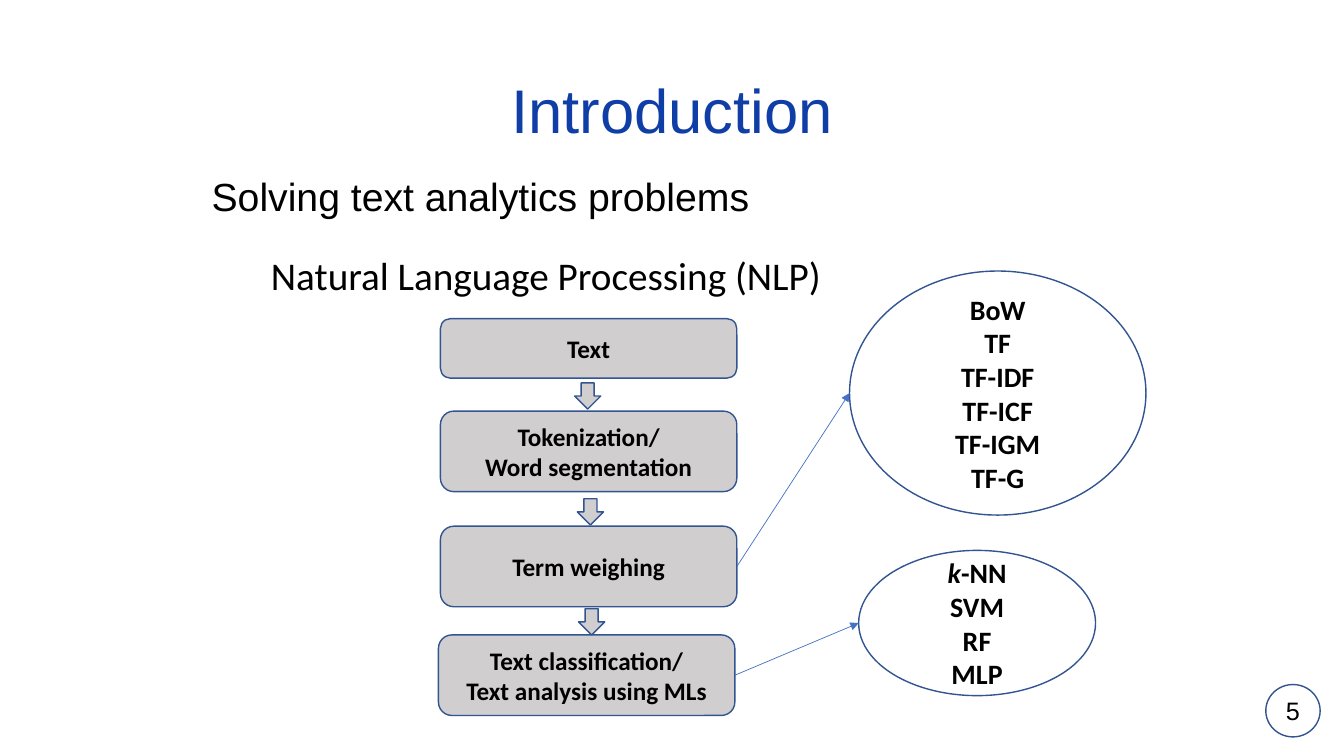
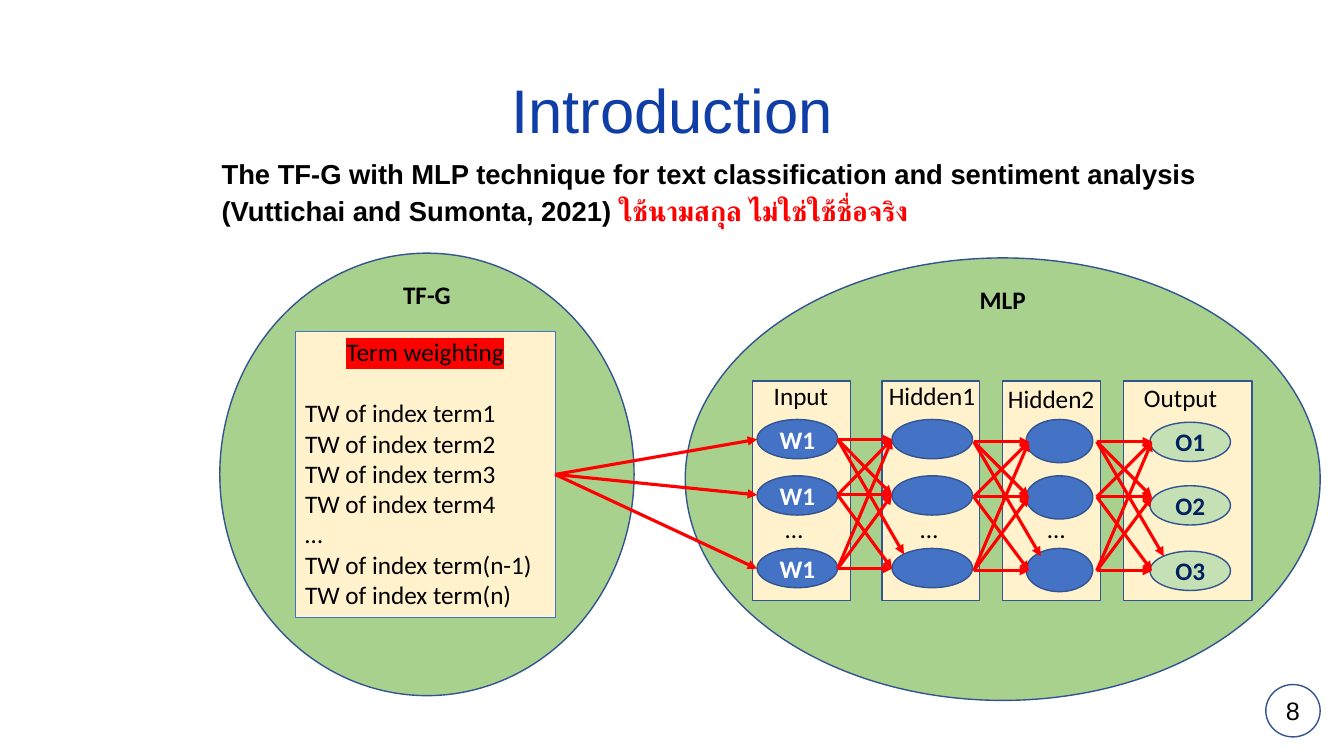
from dataclasses import dataclass
from itertools import product

from lxml import etree
from pptx import Presentation
from pptx.dml.color import RGBColor
from pptx.enum.shapes import MSO_CONNECTOR, MSO_SHAPE
from pptx.enum.text import MSO_ANCHOR, MSO_AUTO_SIZE, PP_ALIGN
from pptx.oxml.ns import qn
from pptx.shapes.autoshape import Shape
from pptx.shapes.connector import Connector
from pptx.slide import Slide
from pptx.text.text import TextFrame
from pptx.util import Cm, Pt

OVAL = MSO_SHAPE.OVAL
RECT = MSO_SHAPE.RECTANGLE
ROUND = MSO_SHAPE.ROUNDED_RECTANGLE
DOWN = MSO_SHAPE.DOWN_ARROW
LINE = MSO_CONNECTOR.STRAIGHT
LEFT, MID = PP_ALIGN.LEFT, PP_ALIGN.CENTER
TOP, CORE = MSO_ANCHOR.TOP, MSO_ANCHOR.MIDDLE
RIGHT_SIDE = 3


@dataclass(frozen=True)
class Theme:
    white: str = "FFFFFF"
    black: str = "000000"
    title: str = "103EA7"
    edge: str = "325491"
    blue: str = "4472C4"
    navy: str = "002060"
    grey: str = "D0CECE"
    green: str = "A9D18E"
    pale: str = "C5E0B4"
    cream: str = "FFF2CC"
    red: str = "FF0000"
    head: str = "Arial"
    text: str = "Calibri"
    huge: float = 44
    large: float = 28
    list: float = 20
    lead: float = 19.6
    base: float = 18


THEME = Theme()


@dataclass(frozen=True)
class Type:
    size: float = THEME.base
    color: str = THEME.black
    bold: bool = False
    face: str = THEME.text


PLAIN = Type()
BOLD = Type(bold=True)
LIST = Type(THEME.list, bold=True)


@dataclass(frozen=True)
class Box:
    x: float
    y: float
    w: float
    h: float


@dataclass(frozen=True)
class Step:
    box: Box
    lines: tuple


@dataclass(frozen=True)
class Layer:
    name: str
    label: Box
    panel: float
    width: float
    node: Box
    tops: tuple
    tags: tuple
    fill: str = THEME.blue
    ink: str = THEME.white
    dots: bool = True


@dataclass(frozen=True)
class Gap:
    start: float
    end: float
    rows: tuple


STEPS = (
    Step(Box(11.1, 8.03, 7.47, 1.5), ("Text",)),
    Step(Box(11.1, 10.36, 7.47, 2.03), ("Tokenization/", "Word segmentation")),
    Step(Box(11.1, 13.26, 7.47, 2.03), ("Term weighing",)),
    Step(Box(11.05, 16, 7.47, 2.03), ("Text classification/", "Text analysis using MLs")),
)
DROPS = ((14.48, 9.65), (14.55, 12.57), (14.58, 15.34))

ROWS = (10.57, 11.99, 13.82)
BLANK = ("", "", "")
LAYERS = (
    Layer("Input", Box(19.25, 9.47, 1.91, 1.02), 18.97, 2.46,
          Box(19.08, 0, 2.03, 0.99), ROWS, ("W1", "W1", "W1")),
    Layer("Hidden1", Box(22.15, 9.45, 2.72, 1.02), 22.23, 2.46,
          Box(22.48, 0, 2.03, 0.99), ROWS, BLANK),
    Layer("Hidden2", Box(25.15, 9.53, 2.72, 1.02), 25.27, 2.46,
          Box(25.86, 0, 1.68, 1.09), ROWS, BLANK),
    Layer("Output", Box(28.58, 9.5, 2.39, 1.02), 28.32, 3.23,
          Box(28.98, 0, 2.03, 0.99), (10.64, 12.24, 13.89),
          ("O1", "O2", "O3"), THEME.pale, THEME.navy, False),
)
NEAR = (11.07, 12.47, 14.33)
FAR = (11.13, 12.52, 14.38)
GAPS = (Gap(21.11, 22.48, NEAR), Gap(24.54, 25.93, FAR), Gap(27.64, 29.03, FAR))


def tint(code: str) -> RGBColor:
    return RGBColor.from_string(code)


def write(frame: TextFrame, lines: tuple, style: Type,
          align: PP_ALIGN = MID, anchor: MSO_ANCHOR = CORE, wrap: bool = True) -> None:
    frame.word_wrap = wrap
    frame.auto_size = MSO_AUTO_SIZE.NONE
    frame.vertical_anchor = anchor
    for i, line in enumerate(lines):
        para = frame.add_paragraph() if i else frame.paragraphs[0]
        para.alignment = align
        for part in (line,) if isinstance(line, str) else line:
            run = para.add_run()
            run.text = part
            font = run.font
            font.size, font.bold, font.name = Pt(style.size), style.bold, style.face
            font.color.rgb = tint(style.color)


def place(shape: Shape, box: Box) -> None:
    shape.left, shape.top = Cm(box.x), Cm(box.y)
    shape.width, shape.height = Cm(box.w), Cm(box.h)


def draw(slide: Slide, kind: MSO_SHAPE, box: Box, fill: str, lines: tuple = (),
         style: Type = BOLD, edge: str = THEME.edge, width: float = 1) -> Shape:
    shape = slide.shapes.add_shape(kind, Cm(box.x), Cm(box.y), Cm(box.w), Cm(box.h))
    shape.shadow.inherit = False
    shape.fill.solid()
    shape.fill.fore_color.rgb = tint(fill)
    shape.line.color.rgb = tint(edge)
    shape.line.width = Pt(width)
    write(shape.text_frame, lines, style)
    return shape


def label(slide: Slide, box: Box, text: str, style: Type = PLAIN,
          align: PP_ALIGN = MID, anchor: MSO_ANCHOR = CORE, wrap: bool = True) -> None:
    shape = slide.shapes.add_textbox(Cm(box.x), Cm(box.y), Cm(box.w), Cm(box.h))
    write(shape.text_frame, (text,), style, align, anchor, wrap)


def link(slide: Slide, x: float, y: float, to_x: float, to_y: float,
         color: str, width: float) -> Connector:
    line = slide.shapes.add_connector(LINE, Cm(x), Cm(y), Cm(to_x), Cm(to_y))
    line.line.color.rgb = tint(color)
    line.line.width = Pt(width)
    props = line.element.spPr
    etree.SubElement(props.find(qn("a:ln")), qn("a:tailEnd"), type="triangle")
    etree.SubElement(props, qn("a:effectLst"))
    return line


def join(slide: Slide, shape: Shape, box: Box, to_x: float, to_y: float,
         color: str, width: float) -> None:
    line = link(slide, box.x + box.w, box.y + box.h / 2, to_x, to_y, color, width)
    line.begin_connect(shape, RIGHT_SIDE)


def start(deck: Presentation, page: str, box: Box, lines: tuple,
          style: Type, pitch: float) -> Slide:
    slide = deck.slides.add_slide(deck.slide_layouts[1])
    draw(slide, OVAL, Box(31.9, 17.25, 1.37, 1.32), THEME.white, (page,),
         Type(face=THEME.head))
    title = slide.shapes.title
    place(title, Box(2.34, 1.02, 29.21, 3.68))
    write(title.text_frame, ("Introduction",),
          Type(THEME.huge, THEME.title, face=THEME.head))
    title.text_frame.paragraphs[0].line_spacing = 0.9
    body = slide.placeholders[1]
    place(body, box)
    write(body.text_frame, lines, style, LEFT, TOP)
    for i, para in enumerate(body.text_frame.paragraphs):
        props = para._p.get_or_add_pPr()
        props.set("marL", "0")
        props.set("indent", "0")
        etree.SubElement(props, qn("a:buNone"))
        para.line_spacing = pitch
        para.space_before = Pt(10 if i else 0)
    return slide


def flow(deck: Presentation) -> None:
    slide = start(deck, "5", Box(5.08, 4.34, 26.87, 1.57),
                  ("Solving text analytics problems",),
                  Type(THEME.large, face=THEME.head), 0.9)
    label(slide, Box(6.58, 6.2, 14.53, 1.45), "Natural Language Processing (NLP)",
          Type(THEME.large), LEFT, TOP, False)
    steps = [draw(slide, ROUND, step.box, THEME.grey, step.lines) for step in STEPS]
    for x, y in DROPS:
        draw(slide, DOWN, Box(x, y, 0.66, 0.66), THEME.grey)
    terms = Box(21.41, 6.83, 7.47, 6.15)
    draw(slide, OVAL, terms, THEME.white,
         ("BoW", "TF", "TF-IDF", "TF-ICF", "TF-IGM", "TF-G"), LIST)
    tools = Box(21.64, 13.87, 5.97, 3.66)
    oval = draw(slide, OVAL, tools, THEME.white, (("k", "-NN"), "SVM", "RF", "MLP"), LIST)
    oval.text_frame.paragraphs[0].runs[0].font.italic = True
    for i, goal in ((2, terms), (3, tools)):
        join(slide, steps[i], STEPS[i].box, goal.x, goal.y + goal.h / 2, THEME.blue, 0.5)


def mesh(slide: Slide, gap: Gap) -> None:
    for i, j in product(range(3), repeat=2):
        steep = (i, j) == (0, 2)
        link(slide, gap.start, gap.rows[i],
             gap.end + (0.3 if steep else 0), gap.rows[j] - (0.36 if steep else 0),
             THEME.red, 2.25)


def terms_box(slide: Slide, box: Box) -> Shape:
    shape = draw(slide, RECT, box, THEME.cream, edge=THEME.blue, width=0.75)
    terms = tuple(f"TW of index term{n}" for n in (1, 2, 3, 4))
    lines = ("Term weighting", *terms, "…", "TW of index term(n-1)", "TW of index term(n)")
    write(shape.text_frame, lines, PLAIN, LEFT, TOP)
    head = shape.text_frame.paragraphs[0]
    head.alignment = MID
    head.space_after = Pt(22)
    mark = etree.Element(qn("a:highlight"))
    etree.SubElement(mark, qn("a:srgbClr"), val=THEME.red)
    head.runs[0]._r.get_or_add_rPr().find(qn("a:latin")).addprevious(mark)
    return shape


def model(deck: Presentation) -> None:
    slide = start(deck, "8", Box(5.33, 4.06, 27.53, 2.36),
                  ("The TF-G with MLP technique for text classification and sentiment analysis",
                   ("(Vuttichai and Sumonta, 2021) ", "ใช้นามสกุล ไม่ใช่ใช้ชื่อจริง")),
                  Type(THEME.lead, bold=True, face=THEME.head), 0.7)
    note = slide.placeholders[1].text_frame.paragraphs[1].runs[1]
    note.font.color.rgb = tint(THEME.red)
    for name, box in (("TF-G", Box(5.54, 6.38, 10.44, 11.15)),
                      ("MLP", Box(17.27, 6.5, 16, 11.15))):
        draw(slide, OVAL, box, THEME.green)
        label(slide, Box(box.x, box.y + 0.53, box.w, 1.02), name, BOLD)
    frame = Box(7.44, 8.36, 6.55, 7.19)
    terms = terms_box(slide, frame)
    for layer in LAYERS:
        node = layer.node
        draw(slide, RECT, Box(layer.panel, 9.6, layer.width, 5.54), THEME.cream)
        for y, tag in zip(layer.tops, layer.tags):
            draw(slide, OVAL, Box(node.x, y, node.w, node.h), layer.fill,
                 (tag,) if tag else (), Type(color=layer.ink, bold=True))
        if layer.dots:
            label(slide, Box(node.x - 0.08, 12.98, node.w, 0.69), "…")
    for y in NEAR:
        join(slide, terms, frame, LAYERS[0].node.x, y, THEME.red, 2.25)
    for gap in GAPS:
        mesh(slide, gap)
    for layer in LAYERS:
        label(slide, layer.label, layer.name, PLAIN, LEFT, TOP, False)


def main() -> None:
    deck = Presentation()
    deck.slide_width, deck.slide_height = Cm(33.87), Cm(19.05)
    flow(deck)
    model(deck)
    deck.save("out.pptx")


if __name__ == "__main__":
    main()
